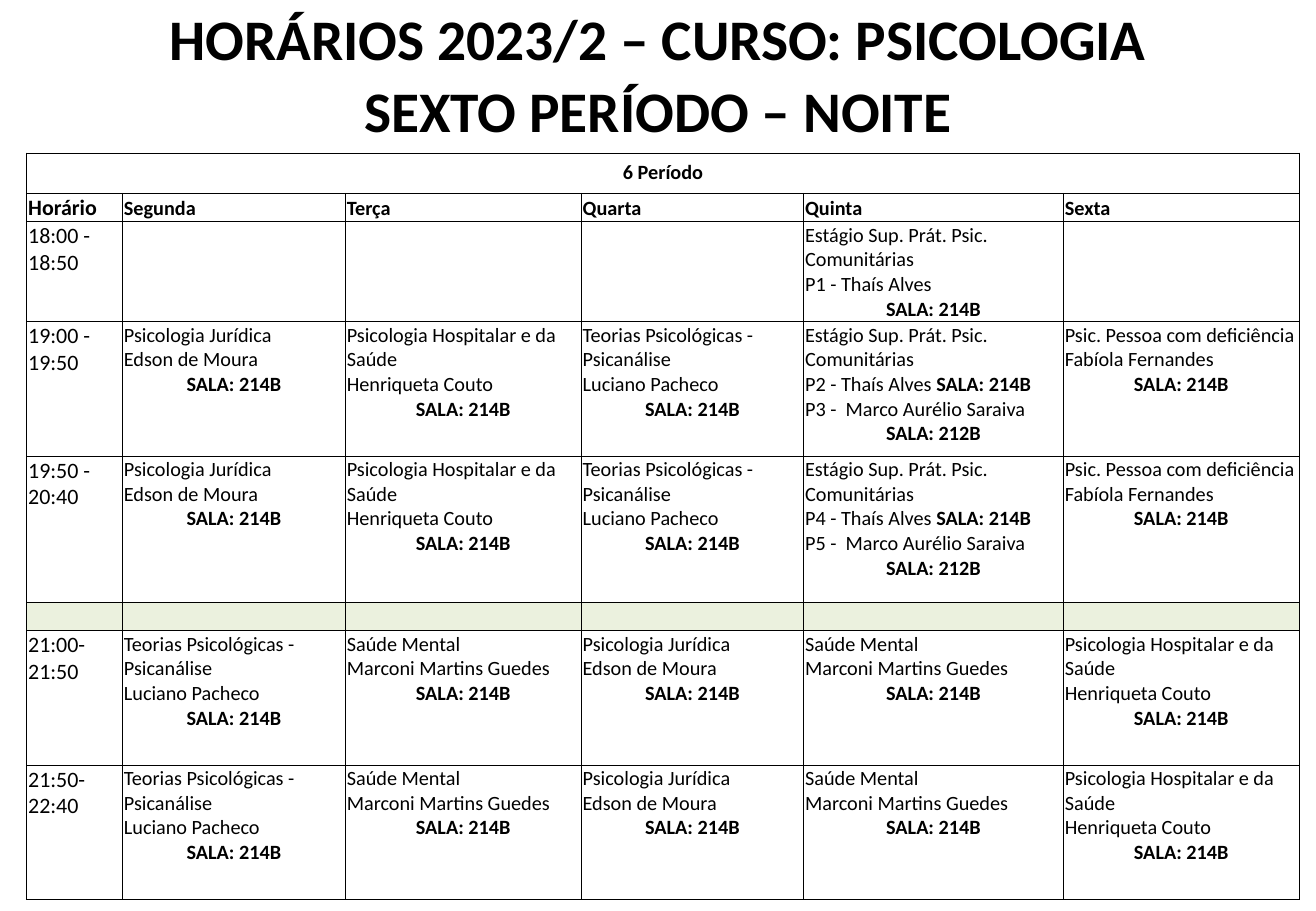
from dataclasses import dataclass

from lxml import etree
from pptx import Presentation
from pptx.dml.color import RGBColor
from pptx.enum.text import MSO_ANCHOR, PP_ALIGN
from pptx.oxml.ns import qn
from pptx.util import Cm, Pt

LEFT, CENTER = PP_ALIGN.LEFT, PP_ALIGN.CENTER
TOP, MIDDLE, BOTTOM = MSO_ANCHOR.TOP, MSO_ANCHOR.MIDDLE, MSO_ANCHOR.BOTTOM


@dataclass(frozen=True)
class Theme:
    font: str = "Calibri"
    ink: str = "000000"
    interval: str = "EBF1DE"
    title_size: int = 34
    time_size: int = 13
    body_size: int = 12
    border: float = 0.5


@dataclass(frozen=True)
class Line:
    text: str
    room: str = ""
    bold: bool = False
    align: PP_ALIGN = LEFT


class Schedule:
    def __init__(self, slide, theme):
        self.slide = slide
        self.theme = theme

    def style(self, paragraph, size, bold, align):
        paragraph.alignment = align
        font = paragraph.font
        font.name = self.theme.font
        font.size = Pt(size)
        font.color.rgb = RGBColor.from_string(self.theme.ink)
        if bold is not None:
            font.bold = bold

    def title(self, lines, left, top, width, height):
        title = self.slide.shapes.title
        title.left, title.top, title.width, title.height = map(Cm, (left, top, width, height))
        frame = title.text_frame
        frame.text = "\n".join(lines)
        frame.vertical_anchor = MIDDLE
        for paragraph in frame.paragraphs:
            paragraph.line_spacing = 0.9
            paragraph.space_after = Pt(6)
            self.style(paragraph, self.theme.title_size, True, CENTER)

    def table(self, left, top, widths, heights):
        frame = self.slide.shapes.add_table(
            len(heights), len(widths), Cm(left), Cm(top), Cm(sum(widths)), Cm(sum(heights)))
        table = frame.table
        table.first_row = table.horz_banding = False
        for column, width in zip(table.columns, widths):
            column.width = Cm(width)
        for row, height in zip(table.rows, heights):
            row.height = Cm(height)
        return table

    def borders(self, cell):
        properties = cell._tc.get_or_add_tcPr()
        for side in ("a:lnL", "a:lnR", "a:lnT", "a:lnB"):
            border = etree.SubElement(properties, qn(side), w=str(Pt(self.theme.border)))
            fill = etree.SubElement(border, qn("a:solidFill"))
            etree.SubElement(fill, qn("a:srgbClr"), val=self.theme.ink)

    def cell(self, cell, lines, size, anchor=TOP, margins=(0.03, 0.03, 0.03, 0), fill=None):
        self.borders(cell)
        if fill:
            cell.fill.solid()
            cell.fill.fore_color.rgb = RGBColor.from_string(fill)
        else:
            cell.fill.background()
        cell.vertical_anchor = anchor
        cell.margin_left, cell.margin_top, cell.margin_right, cell.margin_bottom = map(Cm, margins)
        frame = cell.text_frame
        if not lines:
            etree.SubElement(frame.paragraphs[0]._p, qn("a:endParaRPr"), sz=str(size * 100))
            return
        frame.text = "\n".join(line.text for line in lines)
        for paragraph, line in zip(frame.paragraphs, lines):
            self.style(paragraph, size, None if line.room else line.bold, line.align)
            if line.room:
                paragraph.runs[-1].font.bold = False
                room = paragraph.add_run()
                room.text = line.room
                room.font.bold = True


def room_line(room):
    return Line(f"SALA: {room}", bold=True, align=CENTER)


def lesson(subject, teacher, room="214B"):
    return [Line(f"{subject}\v{teacher}"), room_line(room)]


def internship(first_group, second_group):
    return [
        Line(f"{INTERNSHIP}\v{first_group} - Thaís Alves ", room="SALA: 214B"),
        Line(f"{second_group} -  Marco Aurélio Saraiva"),
        room_line("212B"),
    ]


INTERNSHIP = "Estágio Sup. Prát. Psic. Comunitárias"
LEGAL = lesson("Psicologia Jurídica", "Edson de Moura")
HOSPITAL = lesson("Psicologia Hospitalar e da Saúde", "Henriqueta Couto")
THEORIES = lesson("Teorias Psicológicas - Psicanálise", "Luciano Pacheco")
DISABILITY = lesson("Psic. Pessoa com deficiência", "Fabíola Fernandes")
MENTAL_HEALTH = lesson("Saúde Mental", "Marconi Martins Guedes")
LATE_LESSONS = [THEORIES, MENTAL_HEALTH, LEGAL, MENTAL_HEALTH, HOSPITAL]

HEADINGS = ["Horário", "Segunda", "Terça", "Quarta", "Quinta", "Sexta"]
INTERVAL = ("", [[]] * 5)
TIMETABLE = [
    ("18:00 - 18:50", [[], [], [], lesson(INTERNSHIP, "P1 - Thaís Alves"), []]),
    ("19:00 - 19:50", [LEGAL, HOSPITAL, THEORIES, internship("P2", "P3"), DISABILITY]),
    ("19:50 - 20:40", [LEGAL, HOSPITAL, THEORIES, internship("P4", "P5"), DISABILITY]),
    INTERVAL,
    ("21:00-21:50", LATE_LESSONS),
    ("21:50-22:40", LATE_LESSONS),
]
COLUMN_WIDTHS = [2, 4.66, 4.93, 4.65, 5.43, 4.93]
ROW_HEIGHTS = [0.84, 0.58, 2.09, 2.81, 3.07, 0.58, 2.81, 2.81]


def main():
    presentation = Presentation()
    presentation.slide_width, presentation.slide_height = Cm(27.51), Cm(19.05)
    theme = Theme()
    schedule = Schedule(presentation.slides.add_slide(presentation.slide_layouts[5]), theme)
    schedule.title(["HORÁRIOS 2023/2 – CURSO: PSICOLOGIA", "SEXTO PERÍODO – NOITE"],
                   1.37, 0.03, 24.77, 3.18)

    table = schedule.table(0.56, 3.2, COLUMN_WIDTHS, ROW_HEIGHTS)
    last_column = len(HEADINGS) - 1
    table.cell(0, 0).merge(table.cell(0, last_column))
    for column, heading in enumerate(HEADINGS):
        period = [] if column else [Line("6 Período", bold=True, align=CENTER)]
        schedule.cell(table.cell(0, column), period, theme.body_size,
                      margins=(0.3, 0.15, 0.3, 0.15))
        size = theme.body_size if column else theme.time_size
        schedule.cell(table.cell(1, column), [Line(heading, bold=True)], size, BOTTOM)

    for row, (time, lessons) in enumerate(TIMETABLE, start=2):
        fill = None if time else theme.interval
        time_lines = [Line(time)] if time else []
        time_size = theme.time_size if time else theme.body_size
        schedule.cell(table.cell(row, 0), time_lines, time_size, fill=fill)
        for column, lines in enumerate(lessons, start=1):
            schedule.cell(table.cell(row, column), lines, theme.body_size, fill=fill)

    presentation.save("out.pptx")


if __name__ == "__main__":
    main()
